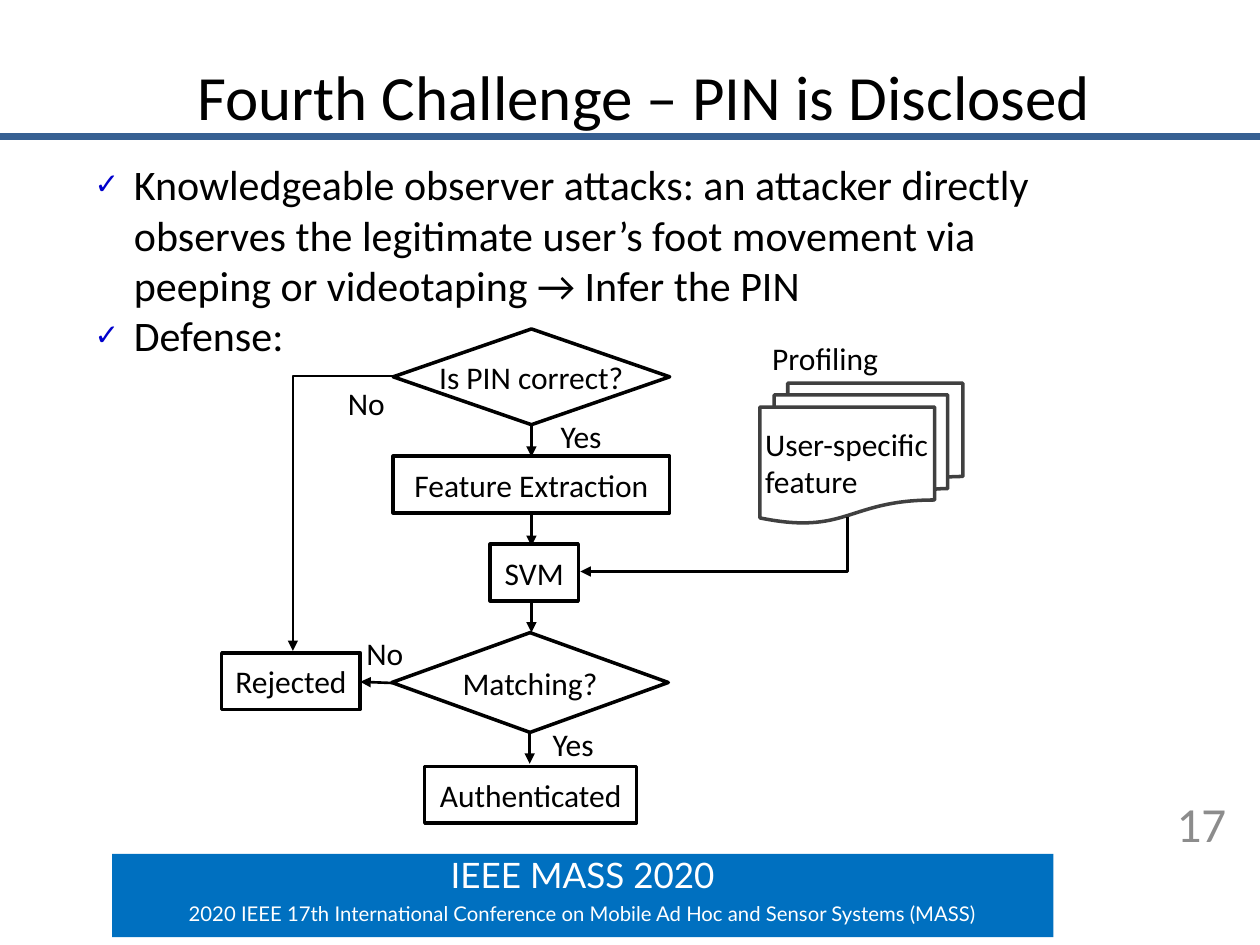
import pptx
import pptx.dml.color
import pptx.enum.shapes
import pptx.enum.text
import pptx.oxml
import pptx.oxml.ns
import pptx.util

Pt = pptx.util.Pt
qn = pptx.oxml.ns.qn
SHAPE = pptx.enum.shapes.MSO_SHAPE
LINE = pptx.enum.shapes.MSO_CONNECTOR
ALIGN = pptx.enum.text.PP_ALIGN
ANCHOR = pptx.enum.text.MSO_ANCHOR


def color(hex_value):
    """Return the colour for a hex string."""
    return pptx.dml.color.RGBColor.from_string(hex_value)


def child(parent, tag, **attrs):
    """Append an XML element with attributes to a parent."""
    el = pptx.oxml.parse_xml(
        f'<{tag} xmlns:a="http://schemas.openxmlformats.org/drawingml/2006/main"/>')
    for name, value in attrs.items():
        el.set(name, str(value))
    parent.append(el)
    return el


def write(sp, *lines, size=18, font="Calibri", fill="000000", align=ALIGN.LEFT,
          anchor=ANCHOR.TOP, wrap=True, spacing=None, bullet=None):
    """Write one formatted paragraph per line of text into a shape."""
    tf = sp.text_frame
    tf.word_wrap = wrap
    tf.auto_size = pptx.enum.text.MSO_AUTO_SIZE.NONE
    tf.vertical_anchor = anchor
    for i, text in enumerate(lines):
        p = tf.add_paragraph() if i else tf.paragraphs[0]
        p.alignment = align
        p.space_before = Pt(0)
        if spacing:
            p.line_spacing = Pt(spacing)
        if bullet:
            pPr = p._p.get_or_add_pPr()
            pPr.set("marL", str(Pt(22.5)))
            pPr.set("indent", str(-Pt(22.5)))
            child(child(pPr, "a:buClr"), "a:srgbClr", val="0000CC")
            child(pPr, "a:buSzPct", val=70000)
            child(pPr, "a:buChar", char=bullet)
        r = p.add_run()
        r.text = text
        r.font.size = Pt(size)
        r.font.name = font
        r.font.color.rgb = color(fill)
    return tf


def place(sp, x, y, w, h):
    """Move and size a shape."""
    sp.left, sp.top, sp.width, sp.height = Pt(x), Pt(y), Pt(w), Pt(h)


def add_label(shapes, text, x, y, w, h=29, **fmt):
    """Add a text box."""
    write(shapes.add_textbox(Pt(x), Pt(y), Pt(w), Pt(h)), text, **fmt)


def add_block(shapes, kind, x, y, w, h, fill=None, line=None):
    """Add a preset shape without shadow."""
    sp = shapes.add_shape(kind, Pt(x), Pt(y), Pt(w), Pt(h))
    sp.shadow.inherit = False
    if fill:
        sp.fill.solid()
        sp.fill.fore_color.rgb = color(fill)
    else:
        sp.fill.background()
    if line:
        sp.line.color.rgb = color(line)
        sp.line.width = Pt(2)
    else:
        sp.line.fill.background()
    return sp


def add_line(shapes, x1, y1, x2, y2, kind=LINE.STRAIGHT, stroke="000000", width=1.5, arrow=True):
    """Add a connector, with an arrowhead at its end if wanted."""
    c = shapes.add_connector(kind, Pt(x1), Pt(y1), Pt(x2), Pt(y2))
    c.line.color.rgb = color(stroke)
    c.line.width = Pt(width)
    if arrow:
        child(c.line._get_or_add_ln(), "a:tailEnd", type="triangle")
    child(c._element.spPr, "a:effectLst")
    return c


def add_elbow(shapes, x1, y1, x2, y2, preset, degrees, adjust=None):
    """Add a rotated elbow arrow, given its unrotated ends."""
    c = add_line(shapes, x1, y1, x2, y2, LINE.ELBOW)
    c._element.spPr.find(qn("a:xfrm")).set("rot", str(degrees * 60000))
    geom = c._element.spPr.find(qn("a:prstGeom"))
    geom.set("prst", preset)
    if adjust is not None:
        child(geom.find(qn("a:avLst")), "a:gd", name="adj1", fmla=f"val {adjust}")


def add_flowchart(s, x, y):
    """Draw the authentication flowchart from its top left corner."""
    shapes = s.shapes.add_group_shape().shapes
    nodes = [
        ("Is PIN correct?", SHAPE.DIAMOND, 98, 0, 158, 54.7, "FFFFFF"),
        ("Feature Extraction", SHAPE.RECTANGLE, 98, 72.7, 158, 32.4, None),
        ("SVM", SHAPE.RECTANGLE, 153.4, 123, 50.4, 32.4, None),
        ("Matching?", SHAPE.DIAMOND, 97.2, 173.5, 158, 57, "FFFFFF"),
        ("Authenticated", SHAPE.RECTANGLE, 116, 250, 121, 32.4, None),
        ("Rejected", SHAPE.RECTANGLE, 0, 185, 79.2, 32.4, None),
    ]
    for text, kind, dx, dy, w, h, fill in nodes:
        sp = add_block(shapes, kind, x + dx, y + dy, w, h, fill, "000000")
        write(sp, text, align=ALIGN.CENTER, anchor=ANCHOR.MIDDLE, wrap=False)

    sp = add_block(shapes, SHAPE.FLOWCHART_MULTIDOCUMENT, x + 307.5, y + 31, 116, 80,
                   "FFFFFF", "404040")
    tf = write(sp, "User-specific feature", anchor=ANCHOR.MIDDLE)
    tf.margin_left, tf.margin_right = Pt(3), Pt(0)

    arrows = [(177, 54.7, 177, 73), (177, 106, 177, 124), (177, 155.5, 177, 173.5),
              (176, 230.5, 176, 248.5), (97.2, 202.3, 79.2, 201.6)]
    for x1, y1, x2, y2 in arrows:
        add_line(shapes, x + x1, y + y1, x + x2, y + y2)
    add_elbow(shapes, x + 265.7, y + 46.8, x + 296.7, y + 199.4, "bentConnector2", 90)
    add_elbow(shapes, x + 147.6, y + 134.7, x - 8.6, y + 77.1, "bentConnector3", 270, -600)

    labels = [("Yes", 186.5, 46.8, 57), ("Yes", 182, 222.5, 57), ("No", 75.6, 170.7, 57),
              ("No", 65, 28, 42.5), ("Profiling", 307.5, 2, 77)]
    for text, dx, dy, w in labels:
        add_label(shapes, text, x + dx, y + dy, w)


def add_footer(s, x, y, w, h):
    """Draw the conference banner in its box."""
    sp = add_block(s.shapes, SHAPE.RECTANGLE, x, y, w, h, "0070C0")
    tf = write(sp, "IEEE MASS 2020",
               "2020 IEEE 17th International Conference on Mobile Ad Hoc and Sensor Systems (MASS)",
               size=20, font="Lato", fill="FFFFFF", align=ALIGN.CENTER,
               anchor=ANCHOR.MIDDLE, spacing=25)
    tf.paragraphs[1].runs[0].font._element.set("baseline", "30000")


def add_text(s, x, y, w, h):
    """Fill the title and the bullet list below it."""
    title, body = s.placeholders
    place(title, x + 8, y, 720, 46)
    write(title, "Fourth Challenge – PIN is Disclosed", size=36, align=ALIGN.CENTER)
    place(body, x + 46.8, y + 57.6, w - 120, h - 57.6)
    write(body, "Knowledgeable observer attacks: an attacker directly observes the legitimate "
          "user’s foot movement via peeping or videotaping → Infer the PIN", "Defense:",
          size=24, bullet="✓")


def main():
    """Build and save the slide."""
    prs = pptx.Presentation()
    prs.slide_width, prs.slide_height = Pt(720), Pt(540)
    s = prs.slides.add_slide(prs.slide_layouts[1])
    add_line(s.shapes, 0, 77.8, 720, 77.8, stroke="376092", width=4, arrow=False)
    add_footer(s, 64, 488, 538, 47.5)
    add_text(s, 0, 29.5, 720, 181.5)
    add_flowchart(s, 126.7, 188)
    add_label(s.shapes, "17", 545.8, 455.8, 162, size=28, fill="8C8C8C",
              align=ALIGN.RIGHT, anchor=ANCHOR.MIDDLE)
    prs.save("out.pptx")


if __name__ == "__main__":
    main()
